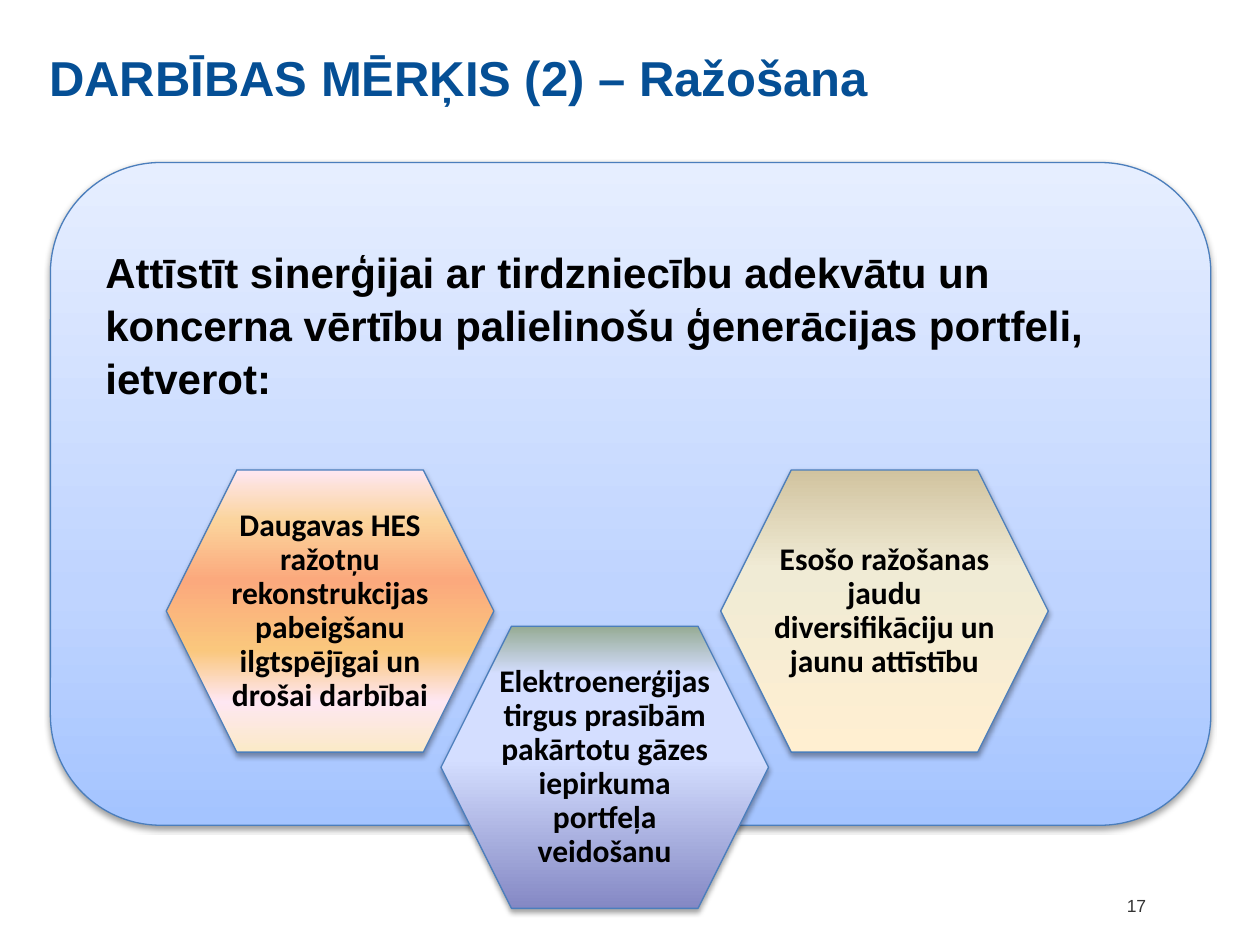
from dataclasses import dataclass

from lxml import etree
from pptx import Presentation
from pptx import util as u
from pptx.dml.color import RGBColor
from pptx.enum import shapes, text
from pptx.oxml.ns import qn


@dataclass(frozen=True)
class Theme:
    head: str = "Arial"
    body: str = "Calibri"
    blue: str = "054F95"
    black: str = "000000"
    grey: str = "333333"
    edge: str = "4B7EBC"
    title: int = 28
    lead: int = 24
    label: int = 18
    page: int = 10
    sky: tuple = ((0, "A4C4FF"), (35, "BFD4FF"), (100, "E6EEFF"))
    sunset: tuple = ((0, "FBEAC7"), (18, "FEE7F2"), (36, "FAC77D"),
                     (61, "FBA97D"), (82, "FBD49C"), (100, "FEE7F2"))
    sand: tuple = ((0, "FFEFD1"), (65, "F0EBD5"), (100, "D1C39F"))
    dusk: tuple = ((0, "8488C4"), (53, "D4DEFF"), (83, "D4DEFF"), (100, "96AB94"))


T = Theme()
LEFT, MID = text.PP_ALIGN.LEFT, text.PP_ALIGN.CENTER
TOP, CENTER = text.MSO_ANCHOR.TOP, text.MSO_ANCHOR.MIDDLE


def write(shape, words, font, size, color, bold=True, align=LEFT,
          anchor=TOP, pads=(0, 0, 0, 0), space=None):
    frame = shape.text_frame
    frame.word_wrap = True
    frame.vertical_anchor = anchor
    (frame.margin_left, frame.margin_top,
     frame.margin_right, frame.margin_bottom) = map(u.Inches, pads)
    frame.text = words
    para = frame.paragraphs[0]
    para.alignment = align
    para.line_spacing = space
    face = para.runs[0].font
    face.name, face.size, face.bold = font, u.Pt(size), bold
    face.color.rgb = RGBColor.from_string(color)


def add_text(slide, box, words, *args, **style):
    shape = slide.shapes.add_textbox(*map(u.Inches, box))
    write(shape, words, *args, **style)


def add_color(parent, color):
    return etree.SubElement(parent, qn("a:srgbClr"), val=color)


def shade(shape, stops):
    shape.fill.gradient()
    shape.fill.gradient_angle = 90
    group = shape._element.spPr.find(".//" + qn("a:gsLst"))
    for old in list(group):
        group.remove(old)
    for spot, color in stops:
        add_color(etree.SubElement(group, qn("a:gs"), pos=str(spot * 1000)), color)


def cast(shape, alpha, dist):
    shape.shadow.inherit = False
    group = shape._element.spPr.find(qn("a:effectLst"))
    outer = etree.SubElement(
        group, qn("a:outerShdw"), blurRad=str(u.Pt(3.1)), dist=str(u.Pt(dist)),
        dir="5400000", rotWithShape="0")
    etree.SubElement(add_color(outer, T.black), qn("a:alpha"), val=str(alpha * 1000))


def add_panel(slide, kind, box, stops, alpha, dist):
    shape = slide.shapes.add_shape(kind, *map(u.Inches, box))
    shade(shape, stops)
    shape.line.color.rgb = RGBColor.from_string(T.edge)
    shape.line.width = u.Pt(0.75)
    cast(shape, alpha, dist)
    return shape


def add_hex(slide, left, top, stops, words):
    shape = add_panel(slide, shapes.MSO_SHAPE.HEXAGON, (left, top, 2.6, 2.24),
                      stops, 35, 1.8)
    write(shape, words, T.body, T.label, T.black, align=MID, anchor=CENTER,
          pads=(0, 0.05, 0, 0.05), space=0.9)


def main():
    deck = Presentation()
    deck.slide_width, deck.slide_height = u.Inches(10), u.Inches(7.5)
    slide = deck.slides.add_slide(deck.slide_layouts[6])

    add_text(slide, (0.39, 0.38, 9.22, 1.18), "DARBĪBAS MĒRĶIS (2) – Ražošana",
             T.head, T.title, T.blue)
    add_text(slide, (8.43, 7.09, 1.18, 0.2), "17", T.head, T.page, T.grey,
             bold=False, align=MID, anchor=CENTER)

    goal = add_panel(slide, shapes.MSO_SHAPE.ROUNDED_RECTANGLE,
                     (0.4, 1.29, 9.21, 5.26), T.sky, 38, 1.6)
    write(goal, "Attīstīt sinerģijai ar tirdzniecību adekvātu un koncerna vērtību "
          "palielinošu ģenerācijas portfeli, ietverot:",
          T.head, T.lead, T.black, pads=(0.18, 0.39, 0.18, 0.05), space=1.05)

    for left, top, stops, words in (
        (1.32, 3.73, T.sunset, "Daugavas HES ražotņu rekonstrukcijas pabeigšanu "
                               "ilgtspējīgai un drošai darbībai"),
        (5.72, 3.73, T.sand, "Esošo ražošanas jaudu diversifikāciju un "
                             "jaunu attīstību"),
        (3.5, 4.97, T.dusk, "Elektroenerģijas tirgus prasībām pakārtotu gāzes "
                            "iepirkuma portfeļa veidošanu"),
    ):
        add_hex(slide, left, top, stops, words)

    deck.save("out.pptx")


if __name__ == "__main__":
    main()
